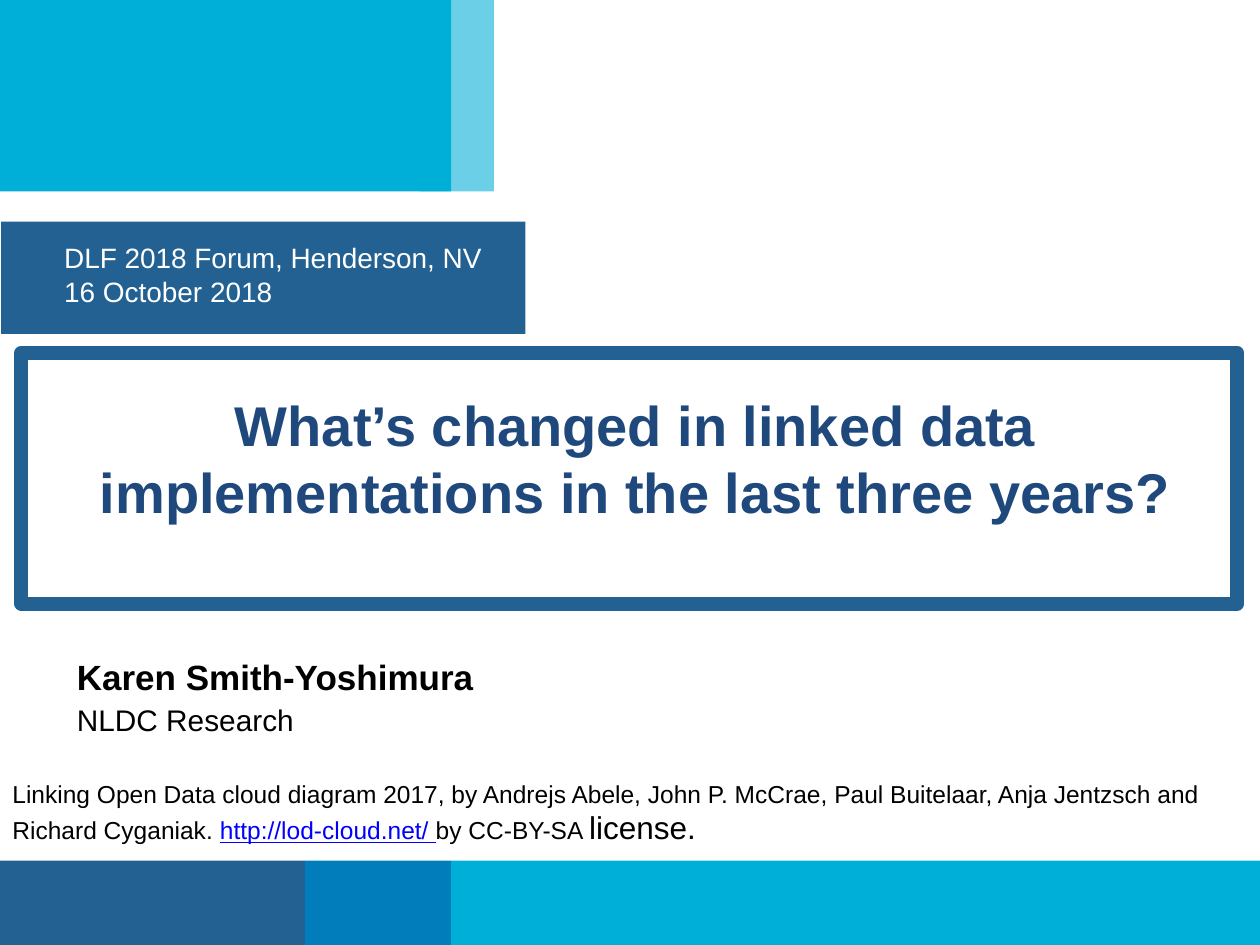
from dataclasses import dataclass
from typing import Optional

from lxml.etree import SubElement as Sub
from pptx import Presentation as Deck
from pptx.dml.color import RGBColor as Rgb
from pptx.enum.shapes import MSO_SHAPE as Kind
from pptx.enum.text import MSO_ANCHOR as Anchor, PP_ALIGN as Align
from pptx.oxml.ns import qn
from pptx.util import Inches, Pt

HUES = {
    "sky": "00AFD7",
    "navy": "236192",
    "blue": "007DBA",
    "ink": "1F497D",
    "link": "0000FF",
    "black": "000000",
    "white": "FFFFFF",
}


@dataclass
class Band:
    box: tuple
    hue: str
    alpha: Optional[int] = None
    edge: Optional[str] = None


@dataclass
class Run:
    text: str
    size: int
    hue: str = "black"
    bold: bool = False
    under: bool = False


@dataclass
class Note:
    box: tuple
    pad: tuple
    lines: list
    wrap: bool = False
    align: Align = Align.LEFT
    band: Optional[Band] = None


def tint(name: str) -> Rgb:
    return Rgb.from_string(HUES[name])


def draw_band(slide, band: Band):
    shape = slide.shapes.add_shape(Kind.RECTANGLE, *map(Inches, band.box))
    shape.shadow.inherit = False
    shape.fill.solid()
    shape.fill.fore_color.rgb = tint(band.hue)
    if band.alpha:
        color = shape.fill._xPr.find(".//" + qn("a:srgbClr"))
        Sub(color, qn("a:alpha")).set("val", str(band.alpha * 1000))
    if band.edge:
        shape.line.color.rgb = tint(band.edge)
        shape.line.width = Pt(8)
    else:
        shape.line.fill.background()
    return shape


def draw_note(slide, note: Note) -> None:
    if note.band:
        shape = draw_band(slide, note.band)
    else:
        shape = slide.shapes.add_textbox(*map(Inches, note.box))
    frame = shape.text_frame
    sides = ("margin_left", "margin_top", "margin_right", "margin_bottom")
    form = dict(zip(sides, map(Inches, note.pad)))
    form |= {"word_wrap": note.wrap, "vertical_anchor": Anchor.TOP}
    for key, value in form.items():
        setattr(frame, key, value)
    for spot, line in enumerate(note.lines):
        para = frame.add_paragraph() if spot else frame.paragraphs[0]
        para.alignment = note.align
        for run in line:
            draw_run(para, run)


def draw_run(para, run: Run) -> None:
    part = para.add_run()
    part.text = run.text
    form = {
        "name": "Arial",
        "size": Pt(run.size),
        "bold": run.bold,
        "underline": run.under,
    }
    for key, value in form.items():
        setattr(part.font, key, value)
    part.font.color.rgb = tint(run.hue)


WIDE, TALL = 10, 7.5
SPLIT, FOOT = 3.58, 6.83
HEAD = 1.52
STOPS = [0, 2.42, SPLIT, WIDE]
BASE = [
    Band((left, FOOT, right - left, TALL - FOOT), hue)
    for left, right, hue in zip(STOPS, STOPS[1:], ("navy", "blue", "sky"))
]
BANDS = [
    Band((0, 0, SPLIT, HEAD), "sky"),
    *BASE,
    Band((3.33, 0, 0.59, HEAD), "sky", alpha=58),
]

EVENT = (0.01, 1.76, 4.16, 0.89)
TITLE = (0.17, 2.8, 9.65, 1.99)
NOTES = [
    Note(
        EVENT,
        (0.5, 0.15, 0.3, 0.2),
        [
            [Run("DLF 2018 Forum, Henderson, NV", 16, "white")],
            [Run("16 October 2018", 16, "white")],
        ],
        band=Band(EVENT, "navy"),
    ),
    Note(
        TITLE,
        (0.6, 0.3, 0.5, 0.4),
        [[Run("What’s changed in linked data implementations in the last three years?", 32, "ink", bold=True)]],
        wrap=True,
        align=Align.CENTER,
        band=Band(TITLE, "white", edge="navy"),
    ),
    Note((0.61, 5.15, 3.27, 0.84), (0, 0.05, 0.1, 0.05), [[Run("Karen Smith-Yoshimura", 20, bold=True)]]),
    Note((0.61, 5.57, 1.85, 0.34), (0, 0, 0.1, 0.05), [[Run("NLDC Research", 17)]]),
    Note(
        (0, 6.13, 9.92, 0.64),
        (0.1, 0.05, 0.1, 0.05),
        [
            [
                Run(
                    "Linking Open Data cloud diagram 2017, by Andrejs Abele, John P. McCrae, "
                    "Paul Buitelaar, Anja Jentzsch and Richard Cyganiak. ",
                    14,
                ),
                Run("http://lod-cloud.net/ ", 14, "link", under=True),
                Run("by CC-BY-SA ", 14),
                Run("license.", 18),
            ]
        ],
        wrap=True,
    ),
]


def main() -> None:
    deck = Deck()
    deck.slide_width, deck.slide_height = Inches(WIDE), Inches(TALL)
    slide = deck.slides.add_slide(deck.slide_layouts[6])
    for band in BANDS:
        draw_band(slide, band)
    for note in NOTES:
        draw_note(slide, note)
    deck.save("out.pptx")


if __name__ == "__main__":
    main()
